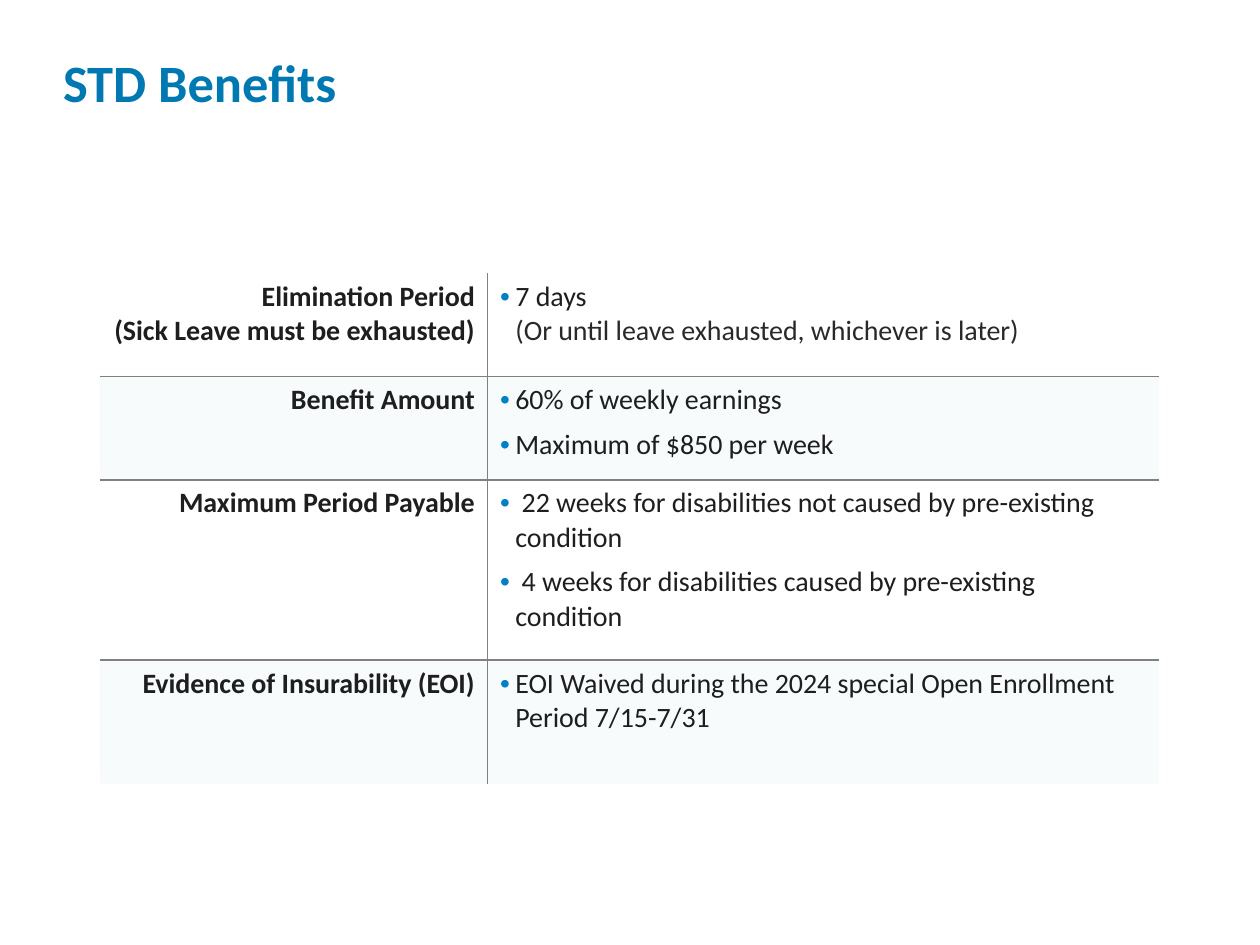
from lxml import etree
from pptx import Presentation
from pptx.dml.color import RGBColor
from pptx.enum.text import MSO_ANCHOR, PP_ALIGN
from pptx.oxml.ns import qn
from pptx.util import Inches, Pt

TOP, LEFT, RIGHT = MSO_ANCHOR.TOP, PP_ALIGN.LEFT, PP_ALIGN.RIGHT
FONT = "Calibri"
HUES = {"title": "0079B3", "text": "1E1E1E", "soft": "292929",
        "dot": "0080C7", "rule": "808080", "band": "DAEDEF"}
PLAIN = "{2D5ABB26-0587-4C30-8999-92F81FD0307C}"  # no style, no grid

# Content: labels, then bullets; a bullet may carry a second, softer line
TITLE = "STD Benefits"
ROWS = [
    (["Elimination Period", "(Sick Leave must be exhausted)"],
     [("7 days", "(Or until leave exhausted, whichever is later)")]),
    (["Benefit Amount"],
     [("60% of weekly earnings",), ("Maximum of $850 per week",)]),
    (["Maximum Period Payable"],
     [(" 22 weeks for disabilities not caused by pre-existing condition",),
      (" 4 weeks for disabilities caused by pre-existing condition",)]),
    (["Evidence of Insurability (EOI)"],
     [("EOI Waived during the 2024 special Open Enrollment Period 7/15-7/31",)]),
]
COLS = [3.08, 5.33]
HIGHS = [0.82, 0.82, 1.43, 0.98]


def add(node, tag, **attrs):
    return etree.SubElement(node, qn(tag), attrs)


def bullet(para):
    props = para._p.get_or_add_pPr()
    props.set("marL", str(Inches(0.12)))
    props.set("indent", str(-Inches(0.12)))
    add(add(props, "a:buClr"), "a:srgbClr", val=HUES["dot"])
    add(props, "a:buFont", typeface="Arial")
    add(props, "a:buChar", char="•")


def write(frame, items, size=16, hue="text", bold=False, align=LEFT,
          after=0, dots=False):
    for i, lines in enumerate(items):
        para = frame.add_paragraph() if i else frame.paragraphs[0]
        para.alignment = align
        para.space_after = Pt(after)
        if dots:
            bullet(para)
        for j, line in enumerate(lines):
            if j:
                para.add_line_break()
            run = para.add_run()
            run.text = line
            font = run.font
            font.name, font.size, font.bold = FONT, Pt(size), bold
            font.color.rgb = RGBColor.from_string(HUES["soft" if j else hue])


def border(cell, sides):
    props = cell._tc.get_or_add_tcPr()
    for side in "LRTB":
        if side in sides:
            line = add(props, "a:ln" + side, w=str(Pt(1)))
            add(add(line, "a:solidFill"), "a:srgbClr", val=HUES["rule"])


def shade(cell, band):
    if not band:
        cell.fill.background()
        return
    cell.fill.solid()
    cell.fill.fore_color.rgb = RGBColor.from_string(HUES["band"])
    tint = cell._tc.tcPr.find(".//" + qn("a:solidFill") + "[last()]")
    tint = cell._tc.tcPr.findall(qn("a:solidFill"))[-1][0]
    add(tint, "a:alpha", val="20000")


deck = Presentation()
deck.slide_width, deck.slide_height = Inches(10), Inches(7.5)
slide = deck.slides.add_slide(deck.slide_layouts[5])

# Title
title = slide.shapes.title
title.left, title.top = Inches(0.5), Inches(0.45)
title.width, title.height = Inches(8.23), Inches(0.96)
frame = title.text_frame
frame.margin_left = frame.margin_right = 0
frame.margin_top = frame.margin_bottom = 0
frame.vertical_anchor = TOP
write(frame, [[TITLE]], size=30, hue="title", bold=True)
frame.paragraphs[0].line_spacing = 0.9

# Benefits table
holder = slide.shapes.add_table(len(ROWS), len(COLS), Inches(0.79), Inches(2.17),
                                Inches(sum(COLS)), Inches(sum(HIGHS)))
table = holder.table
table.first_row = table.horz_banding = False
table._tbl.tblPr.find(qn("a:tableStyleId")).text = PLAIN
for col, wide in zip(table.columns, COLS):
    col.width = Inches(wide)
for r, (labels, points) in enumerate(ROWS):
    table.rows[r].height = Inches(HIGHS[r])
    rules = ("T" if r else "") + ("B" if r < len(ROWS) - 1 else "")
    for c, inner in enumerate("RL"):
        cell = table.cell(r, c)
        border(cell, rules + inner)
        shade(cell, r % 2)
    write(table.cell(r, 0).text_frame, [[label] for label in labels],
          bold=True, align=RIGHT)
    write(table.cell(r, 1).text_frame, points, after=6, dots=True)

deck.save("out.pptx")
